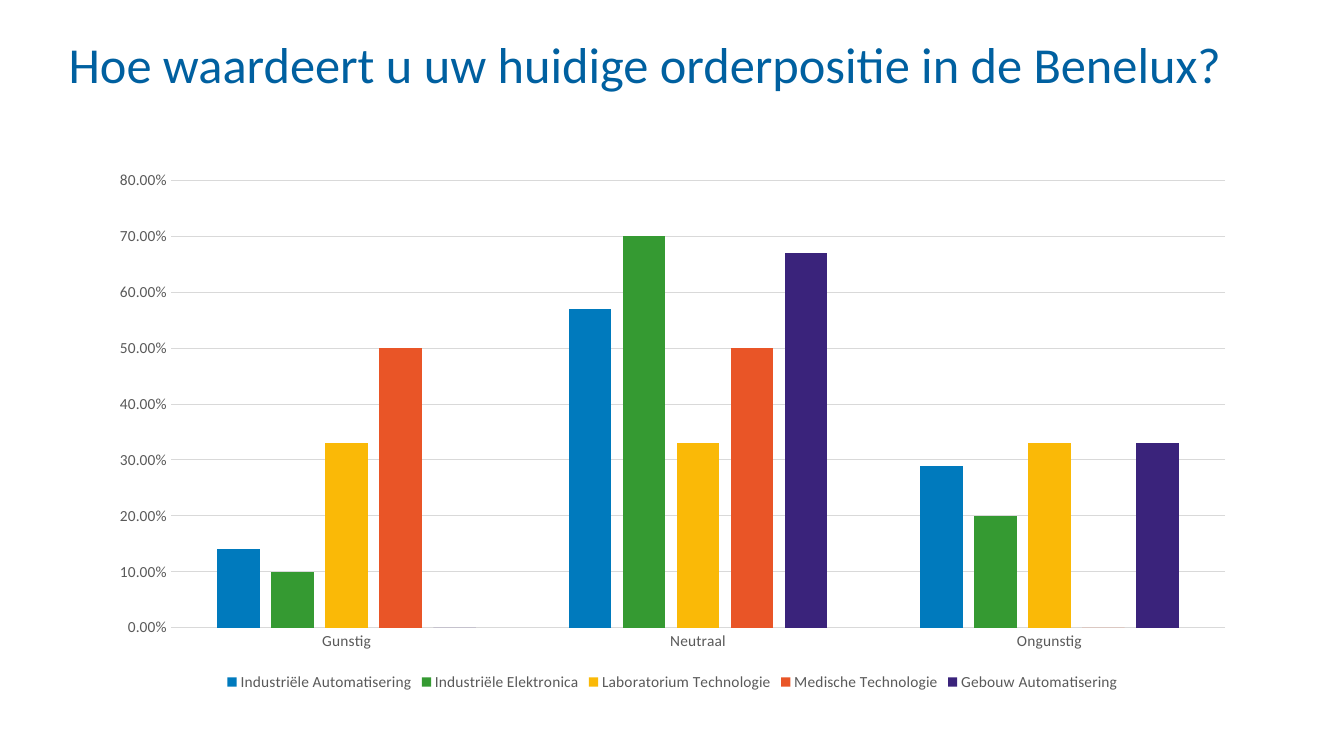
from pptx import Presentation
from pptx.chart.data import CategoryChartData
from pptx.dml.color import RGBColor
from pptx.enum.chart import XL_CHART_TYPE, XL_LEGEND_POSITION, XL_TICK_MARK
from pptx.enum.text import MSO_ANCHOR, PP_ALIGN
from pptx.util import Inches, Pt

COLUMN = XL_CHART_TYPE.COLUMN_CLUSTERED
BOTTOM = XL_LEGEND_POSITION.BOTTOM
NO_TICK = XL_TICK_MARK.NONE
TOP = MSO_ANCHOR.TOP
LEFT = PP_ALIGN.LEFT

FACE = "Calibri"
BLUE = "0060A0"
GREY = "595959"
RULE = "D9D9D9"

RATINGS = ["Gunstig", "Neutraal", "Ongunstig"]
SECTORS = [
    ("Industriële Automatisering", [0.14, 0.57, 0.29], "007ABD"),
    ("Industriële Elektronica", [0.1, 0.7, 0.2], "359A32"),
    ("Laboratorium Technologie", [0.33, 0.33, 0.33], "FAB907"),
    ("Medische Technologie", [0.5, 0.5, 0], "E95527"),
    ("Gebouw Automatisering", [0, 0.67, 0.33], "3A237B"),
]


def paint(color, value):
    color.rgb = RGBColor.from_string(value)


def set_font(font, size, color):
    font.name = FACE
    font.size = Pt(size)
    font.bold = False
    paint(font.color, color)


def set_line(line, color):
    line.width = Pt(0.75)
    line.fill.solid()
    paint(line.fill.fore_color, color)


def set_title(slide, text):
    title = slide.shapes.title
    title.left, title.top = Inches(0.68), Inches(0.4)
    title.width, title.height = Inches(11.87), Inches(0.76)
    frame = title.text_frame
    frame.margin_left = frame.margin_right = 0
    frame.margin_top = frame.margin_bottom = 0
    frame.vertical_anchor = TOP
    frame.word_wrap = True
    frame.text = text
    para = frame.paragraphs[0]
    para.alignment = LEFT
    para.line_spacing = 0.9
    set_font(para.font, 36, BLUE)


def style_axes(chart):
    for axis in (chart.category_axis, chart.value_axis):
        axis.major_tick_mark = axis.minor_tick_mark = NO_TICK
        set_font(axis.tick_labels.font, 11, GREY)
    set_line(chart.category_axis.format.line, RULE)
    scale = chart.value_axis
    scale.minimum_scale, scale.maximum_scale = 0, 0.8
    scale.major_unit = 0.1
    scale.format.line.fill.background()
    set_line(scale.major_gridlines.format.line, RULE)
    scale.tick_labels.number_format = "0.00%"
    scale.tick_labels.number_format_is_linked = False


def add_columns(slide):
    data = CategoryChartData(number_format="0.00%")
    data.categories = RATINGS
    for name, values, _ in SECTORS:
        data.add_series(name, values)
    chart = slide.shapes.add_chart(
        COLUMN, Inches(0.96), Inches(1.59), Inches(11.42), Inches(5.31), data
    ).chart
    set_font(chart.font, 10, "000000")
    chart.has_title = False
    chart.has_legend = True
    chart.legend.position = BOTTOM
    chart.legend.include_in_layout = False
    set_font(chart.legend.font, 11, GREY)
    style_axes(chart)

    plot = chart.plots[0]
    plot.gap_width, plot.overlap = 219, -27
    plot.vary_by_categories = False
    for series, (_, _, color) in zip(plot.series, SECTORS):
        series.format.fill.solid()
        paint(series.format.fill.fore_color, color)


def main():
    deck = Presentation()
    deck.slide_width, deck.slide_height = Inches(13.33), Inches(7.5)
    slide = deck.slides.add_slide(deck.slide_layouts[5])
    set_title(slide, "Hoe waardeert u uw huidige orderpositie in de Benelux?")
    add_columns(slide)
    deck.save("out.pptx")


if __name__ == "__main__":
    main()
